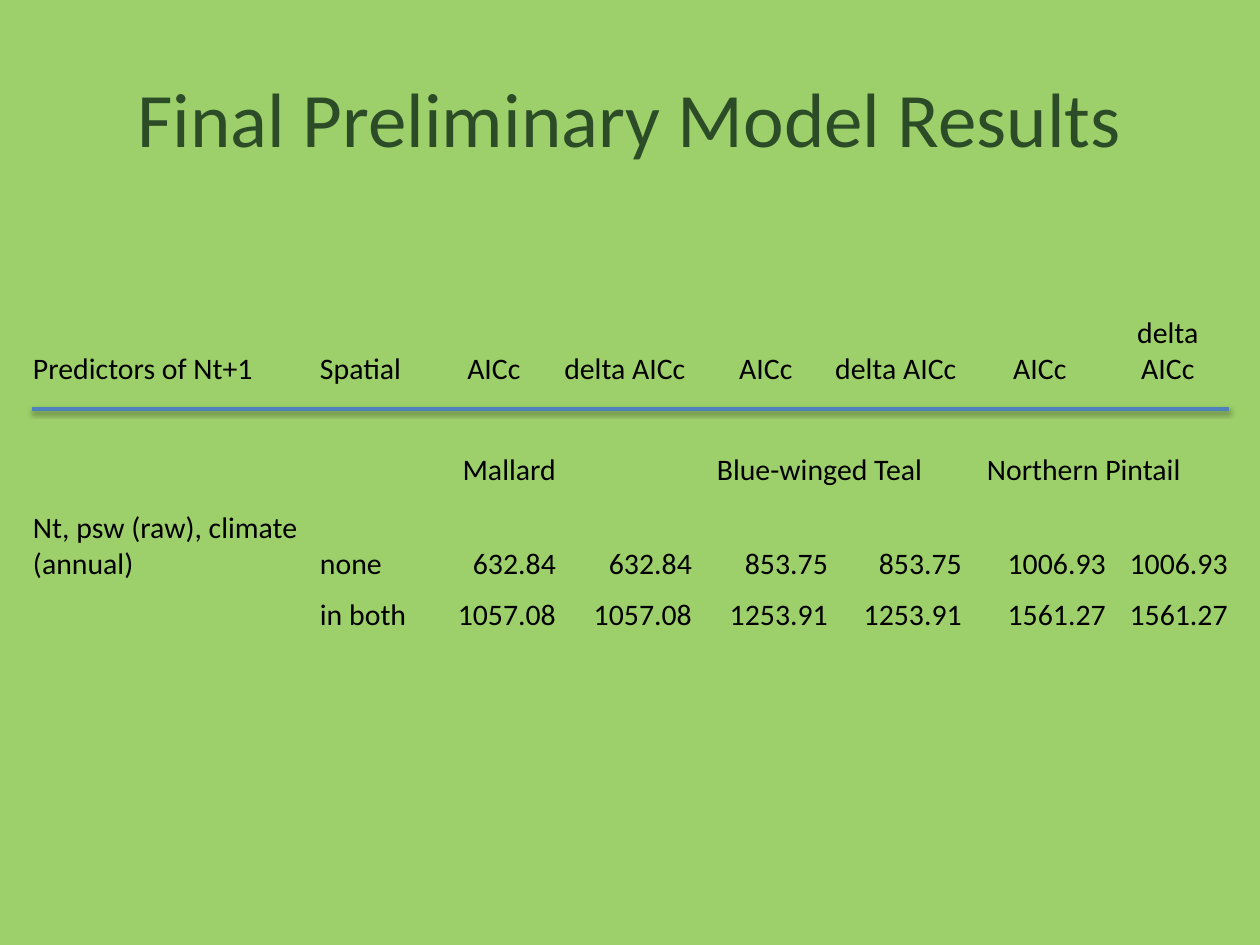
from lxml import etree
from pptx import Presentation
from pptx.dml.color import RGBColor
from pptx.enum.shapes import MSO_CONNECTOR
from pptx.enum.text import MSO_ANCHOR, PP_ALIGN
from pptx.oxml.ns import qn
from pptx.util import Pt

GREEN = RGBColor(0x9D, 0xD0, 0x6A)
DARK = RGBColor(0x2C, 0x4C, 0x28)
BLACK = RGBColor(0, 0, 0)
BLUE = RGBColor(0x4F, 0x81, 0xBD)
LEFT, CENTER, RIGHT = PP_ALIGN.LEFT, PP_ALIGN.CENTER, PP_ALIGN.RIGHT
MIDDLE, BOTTOM = MSO_ANCHOR.MIDDLE, MSO_ANCHOR.BOTTOM
STRAIGHT = MSO_CONNECTOR.STRAIGHT
FONT = "Calibri"
PLAIN = "{2D5ABB26-0587-4C30-8999-92F81FD0307C}"  # no style, no grid


def px(n):
    """Turn pixels, 126 to the inch, into EMU."""
    return round(n * 914400 / 126)


def style(para, size, color, align):
    para.alignment = align
    para.font.name = FONT
    para.font.size = Pt(size)
    para.font.color.rgb = color


deck = Presentation()
deck.slide_width, deck.slide_height = px(1260), px(945)
slide = deck.slides.add_slide(deck.slide_layouts[5])
slide.background.fill.solid()
slide.background.fill.fore_color.rgb = GREEN

title = slide.shapes.title
title.left, title.top, title.width, title.height = px(63), px(38), px(1134), px(157)
title.text_frame.text = "Final Preliminary Model Results"
title.text_frame.vertical_anchor = MIDDLE
style(title.text_frame.paragraphs[0], 44, DARK, CENTER)

# Model table: narrow blank columns part the three species
pair = ["AICc", "delta AICc"]
rows = [
    ["Predictors of Nt+1", "Spatial", *pair, "", *pair, "", *pair],
    [""] * 10,
    ["", "", "Mallard", "", "", "Blue-winged Teal", "", "", "Northern Pintail", ""],
    ["Nt, psw (raw), climate (annual)", "none", "632.84", "632.84", "",
     "853.75", "853.75", "", "1006.93", "1006.93"],
    ["", "in both", "1057.08", "1057.08", "",
     "1253.91", "1253.91", "", "1561.27", "1561.27"],
]
widths = [287, 112, 126, 136, 10, 126, 134, 10, 134, 122]
heights = [94, 51, 50, 94, 51]
HEAD, NAMES = 0, 2
SPANS = (5, 8)

frame = slide.shapes.add_table(len(rows), len(widths), px(32), px(294),
                               px(sum(widths)), px(sum(heights)))
table = frame.table
table.first_row = table.horz_banding = False
table._tbl.tblPr.find(qn("a:tableStyleId")).text = PLAIN
for col, width in zip(table.columns, widths):
    col.width = px(width)
for row, height in zip(table.rows, heights):
    row.height = px(height)

for r, texts in enumerate(rows):
    for c, text in enumerate(texts):
        cell = table.cell(r, c)
        cell.fill.background()
        cell.vertical_anchor = BOTTOM
        cell.margin_left = cell.margin_right = cell.margin_top = px(1)
        cell.margin_bottom = 0
        cell.text = text
        align = LEFT if c < 2 else CENTER if r == HEAD else RIGHT
        if r == NAMES and c in SPANS:
            cell.merge(table.cell(r, c + 1))
            cell.margin_left = px(14)
            align = LEFT
        style(cell.text_frame.paragraphs[0], 17, BLACK, align)

# Rule under the header, with a soft shadow
rule = slide.shapes.add_connector(STRAIGHT, px(32), px(409), px(1229), px(409))
rule.line.color.rgb = BLUE
rule.line.width = Pt(2)
effects = etree.SubElement(rule._element.spPr, qn("a:effectLst"))
shadow = etree.SubElement(effects, qn("a:outerShdw"), blurRad=str(Pt(3.1)),
                          dist=str(Pt(1.6)), dir="5400000", rotWithShape="0")
tint = etree.SubElement(shadow, qn("a:srgbClr"), val="000000")
etree.SubElement(tint, qn("a:alpha"), val="38000")

deck.save("out.pptx")
